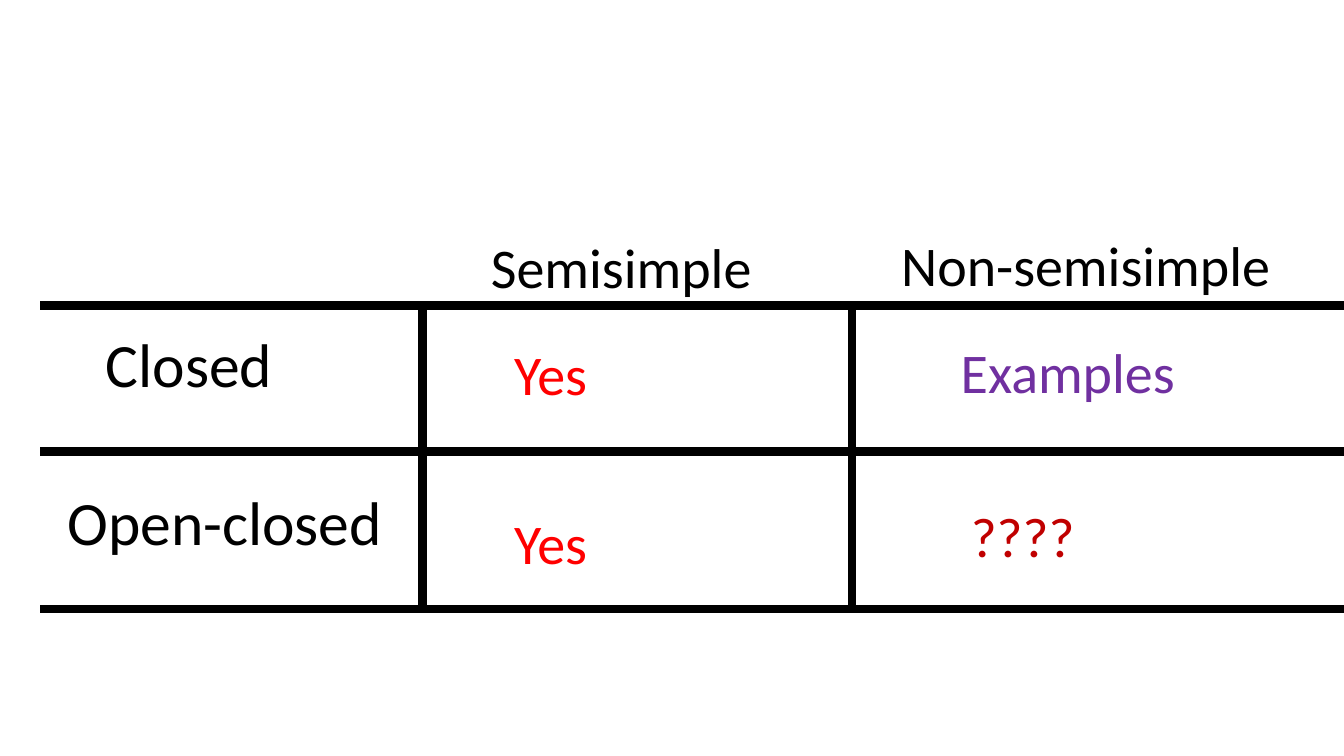
import pptx
import pptx.dml.color
import pptx.enum.shapes
import pptx.enum.text
import pptx.oxml.ns
import pptx.util
from lxml import etree

BLACK = pptx.dml.color.RGBColor(0x00, 0x00, 0x00)
RED = pptx.dml.color.RGBColor(0xFF, 0x00, 0x00)
PURPLE = pptx.dml.color.RGBColor(0x70, 0x30, 0xA0)
DARK_RED = pptx.dml.color.RGBColor(0xC0, 0x00, 0x00)

SLIDE_WIDTH, SLIDE_HEIGHT = 13.33, 7.5
COLUMNS = [0.4, 4.19, 8.45, SLIDE_WIDTH]
ROWS = [3.03, 4.48, 6.04]
HEADER_SIZE, ROW_LABEL_SIZE = 40, 44

HEADERS = [
    ("Semisimple", COLUMNS[1] + 0.58, ROWS[0] - 0.77, 3.36),
    ("Non-semisimple", COLUMNS[2] + 0.39, ROWS[0] - 0.79, 4.11),
]
ROW_LABELS = [
    ("Closed", COLUMNS[0] + 0.55, ROWS[0] + 0.15, 3.47),
    ("Open-closed", COLUMNS[0] + 0.17, ROWS[1] + 0.27, 3.47),
]
ANSWERS = [
    ("Yes", COLUMNS[1] + 0.81, ROWS[0] + 0.29, RED),
    ("Yes", COLUMNS[1] + 0.81, ROWS[1] + 0.52, RED),
    ("Examples", COLUMNS[2] + 0.98, ROWS[0] + 0.27, PURPLE),
    ("????", COLUMNS[2] + 1.08, ROWS[1] + 0.45, DARK_RED),
]
ANSWER_WIDTH = 2.92


def add_label(slide, text, left, top, width, size, color=BLACK):
    """Add a one-line text box whose height follows its font size."""
    height = 0.84 if size == ROW_LABEL_SIZE else 0.77
    box = slide.shapes.add_textbox(*map(pptx.util.Inches, (left, top, width, height)))
    frame = box.text_frame
    frame.word_wrap = True
    frame.auto_size = pptx.enum.text.MSO_AUTO_SIZE.SHAPE_TO_FIT_TEXT
    run = frame.paragraphs[0].add_run()
    run.text = text
    run.font.name = "Calibri"
    run.font.size = pptx.util.Pt(size)
    run.font.color.rgb = color


def add_rule(slide, start, end):
    """Add a thick black line of the grid."""
    rule = slide.shapes.add_connector(
        pptx.enum.shapes.MSO_CONNECTOR.STRAIGHT, *map(pptx.util.Inches, start + end)
    )
    rule.line.color.rgb = BLACK
    rule.line.width = pptx.util.Pt(6)
    etree.SubElement(rule._element.spPr, pptx.oxml.ns.qn("a:effectLst"))


def main():
    """Build the slide and save it."""
    presentation = pptx.Presentation()
    presentation.slide_width = pptx.util.Inches(SLIDE_WIDTH)
    presentation.slide_height = pptx.util.Inches(SLIDE_HEIGHT)
    slide = presentation.slides.add_slide(presentation.slide_layouts[6])
    for text, left, top, width in ROW_LABELS:
        add_label(slide, text, left, top, width, ROW_LABEL_SIZE)
    for text, left, top, width in HEADERS:
        add_label(slide, text, left, top, width, HEADER_SIZE)
    for row in ROWS:
        add_rule(slide, (COLUMNS[0], row), (COLUMNS[-1], row))
    for column in COLUMNS[1:-1]:
        add_rule(slide, (column, ROWS[0]), (column, ROWS[-1]))
    for text, left, top, color in ANSWERS:
        add_label(slide, text, left, top, ANSWER_WIDTH, HEADER_SIZE, color)
    presentation.save("out.pptx")


if __name__ == "__main__":
    main()
